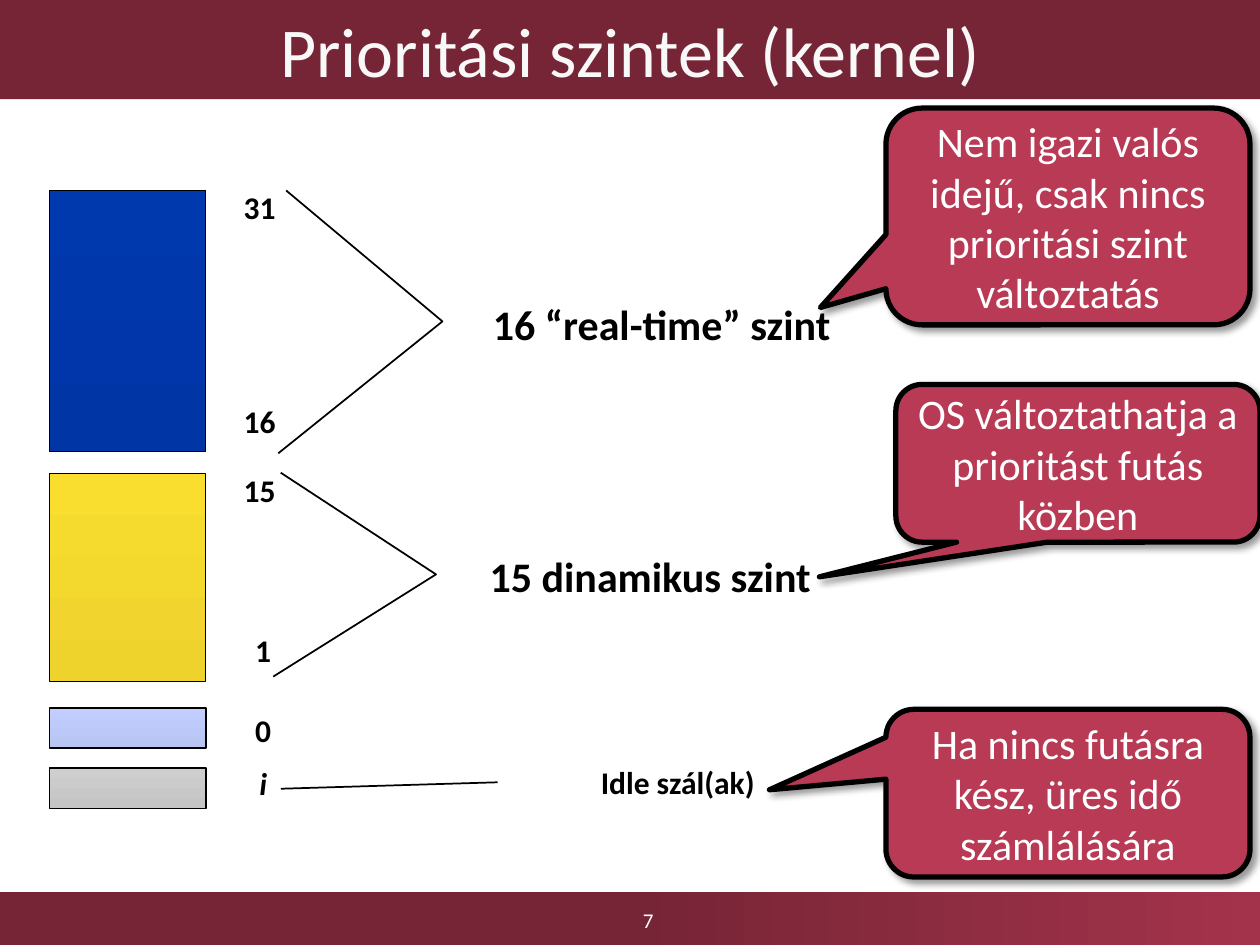
from dataclasses import dataclass

from lxml.etree import SubElement
from pptx import Presentation
from pptx.dml.color import RGBColor
from pptx.enum.shapes import MSO_CONNECTOR as Connector, MSO_SHAPE as Shape
from pptx.enum.text import MSO_ANCHOR as Anchor, PP_ALIGN as Align
from pptx.oxml.ns import qn
from pptx.util import Cm, Pt


@dataclass(frozen=True)
class Theme:
    font: str = "Calibri"
    band: str = "762536"
    band_end: str = "A3334B"
    callout: str = "B83A55"
    title_text: str = "F8F8F8"
    light: str = "FFFFFF"
    dark: str = "000000"
    realtime: tuple = ("0038AE", "0035A6")
    dynamic: tuple = ("F9DD2F", "EED32D")
    zero: tuple = ("C1CEFF", "B8C5F3")
    idle: tuple = ("CECECE", "C5C5C5")
    title_size: int = 40
    body_size: int = 24
    label_size: int = 18
    number_size: int = 12


T = Theme()


def rgb(color):
    return RGBColor.from_string(color)


def box(at):
    return [Cm(v) for v in at]


def write(p, text, size, color, bold=False):
    p.add_run().text = text
    p.alignment = Align.CENTER
    f = p.font
    f.name, f.size, f.bold = T.font, Pt(size), bold
    f.color.rgb = rgb(color)


def set_line(line, width):
    line.color.rgb = rgb(T.dark)
    line.width = Pt(width)


def set_gradient(sp, start, end, angle, start_at=0):
    sp.fill.gradient()
    sp.fill.gradient_angle = angle
    first, last = sp.fill.gradient_stops
    first.color.rgb, last.color.rgb = rgb(start), rgb(end)
    first.position, last.position = start_at, 1


def add_rect(s, at):
    sp = s.shapes.add_shape(Shape.RECTANGLE, *box(at))
    sp.shadow.inherit = False
    sp.line.fill.background()
    return sp


def add_bar(s, top, height, colors, width):
    sp = add_rect(s, (1, top, 3.15, height))
    set_gradient(sp, *colors, angle=270)
    set_line(sp.line, width)


def add_text(s, at, text, size, color=T.dark, bold=True, wrap=True):
    tf = s.shapes.add_textbox(*box(at)).text_frame
    tf.word_wrap = wrap
    tf.vertical_anchor = Anchor.MIDDLE
    write(tf.paragraphs[0], text, size, color, bold)


def add_levels(s, top, height, levels, gap):
    """Two level numbers, gap points apart; each is (text, left indent)."""
    tf = s.shapes.add_textbox(*box((4.5, top, 1.47, height))).text_frame
    tf.word_wrap = True
    paragraphs = tf.paragraphs[0], tf.add_paragraph()
    for p, (text, indent) in zip(paragraphs, levels):
        p._p.get_or_add_pPr().set("marL", str(Pt(indent)))
        write(p, text, T.label_size, T.dark, bold=True)
        p.font.italic = text == "i"
    paragraphs[1].space_before = Pt(gap)


def add_bracket(s, *points):
    start, *rest = [box(point) for point in points]
    builder = s.shapes.build_freeform(*start)
    builder.add_line_segments(rest, close=False)
    sp = builder.convert_to_shape()
    sp.shadow.inherit = False
    sp.fill.background()
    set_line(sp.line, 1)


def add_line(s, start, end):
    line = s.shapes.add_connector(Connector.STRAIGHT, *box(start + end))
    set_line(line.line, 1)
    SubElement(line._element.spPr, qn("a:effectLst"))


def add_shadow(sp):
    sp.shadow.inherit = False
    effects = sp._element.spPr.find(qn("a:effectLst"))
    shadow = SubElement(effects, qn("a:outerShdw"), blurRad=str(Pt(4)),
                        dist=str(Pt(3)), dir="2700000", rotWithShape="0")
    color = SubElement(shadow, qn("a:srgbClr"), val=T.dark)
    SubElement(color, qn("a:alpha"), val="40000")


def add_callout(s, at, tip, text):
    sp = s.shapes.add_shape(Shape.ROUNDED_RECTANGULAR_CALLOUT, *box(at))
    sp.adjustments[0], sp.adjustments[1] = tip
    sp.fill.solid()
    sp.fill.fore_color.rgb = rgb(T.callout)
    set_line(sp.line, 3)
    add_shadow(sp)
    tf = sp.text_frame
    tf.word_wrap = True
    tf.vertical_anchor = Anchor.MIDDLE
    write(tf.paragraphs[0], text, T.body_size, T.light)


def main():
    prs = Presentation()
    prs.slide_width, prs.slide_height = Cm(25.4), Cm(19.05)
    s = prs.slides.add_slide(prs.slide_layouts[6])

    # Footer and title bands
    footer = add_rect(s, (0, 17.98, 25.4, 1.07))
    set_gradient(footer, T.band, T.band_end, angle=0, start_at=0.5)
    header = add_rect(s, (0, 0, 25.4, 2))
    header.fill.solid()
    header.fill.fore_color.rgb = rgb(T.band)
    header.text_frame.vertical_anchor = Anchor.MIDDLE
    write(header.text_frame.paragraphs[0], "Prioritási szintek (kernel)",
          T.title_size, T.title_text)

    # Priority bars
    add_bar(s, 3.84, 5.26, T.realtime, 0.75)
    add_bar(s, 9.55, 4.19, T.dynamic, 0.75)
    add_bar(s, 14.27, 0.81, T.zero, 1)
    add_bar(s, 15.49, 0.81, T.idle, 1)

    # Names of the ranges
    add_text(s, (8.36, 5.16, 9.96, 2.74), "16 “real-time” szint",
             T.body_size, wrap=False)
    add_text(s, (8.13, 10.59, 9.96, 2.03), "15 dinamikus szint",
             T.body_size, wrap=False)
    add_text(s, (8.05, 15.29, 11.23, 0.94), "Idle szál(ak)", T.label_size)

    # Brackets and the idle line
    add_line(s, (5.66, 15.9), (10.03, 15.77))
    add_bracket(s, (5.77, 3.84), (8.92, 6.48), (5.61, 9.14))
    add_bracket(s, (5.66, 9.53), (8.79, 11.58), (5.51, 13.64))

    # Level numbers
    add_levels(s, 3.66, 5.61, [("31", 0), ("16", 0)], gap=101)
    add_levels(s, 9.37, 4.47, [("15", 0), ("1", 4)], gap=70)
    add_levels(s, 14.2, 2.16, [("0", 4), ("i", 4)], gap=9)

    # Callouts
    add_callout(s, (17.86, 2.18, 7.34, 4.37), (-0.68, 0.42),
                "Nem igazi valós idejű, csak nincs prioritási szint változtatás")
    add_callout(s, (18.06, 7.75, 7.34, 3.18), (-0.71, 0.72),
                "OS változtathatja a prioritást futás közben")
    add_callout(s, (17.86, 14.3, 7.34, 3.38), (-0.82, -0.02),
                "Ha nincs futásra kész, üres idő számlálására")

    # Slide number
    add_text(s, (8.94, 18.06, 8.26, 0.99), "7", T.number_size, T.light,
             bold=False)

    prs.save("out.pptx")


if __name__ == "__main__":
    main()
